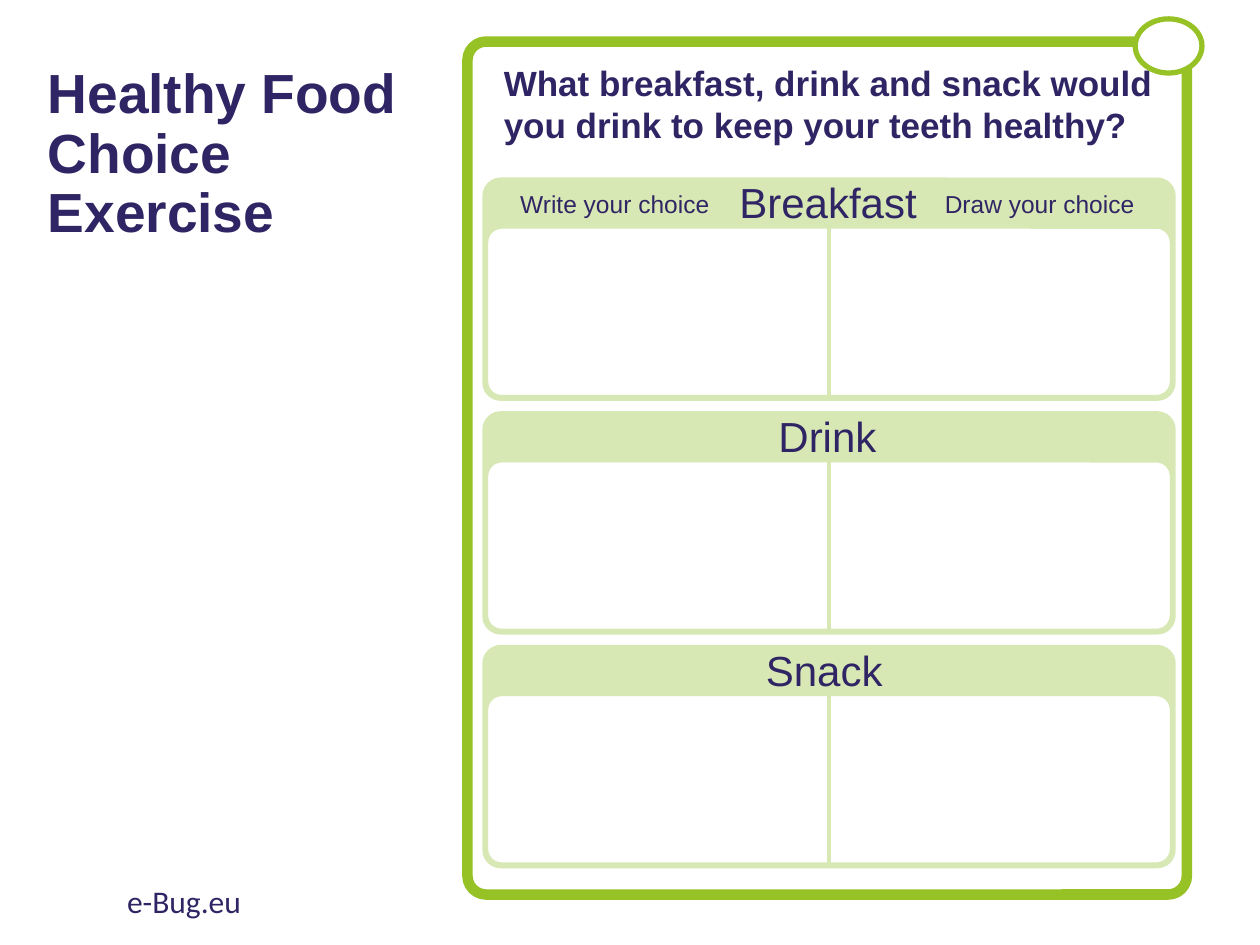
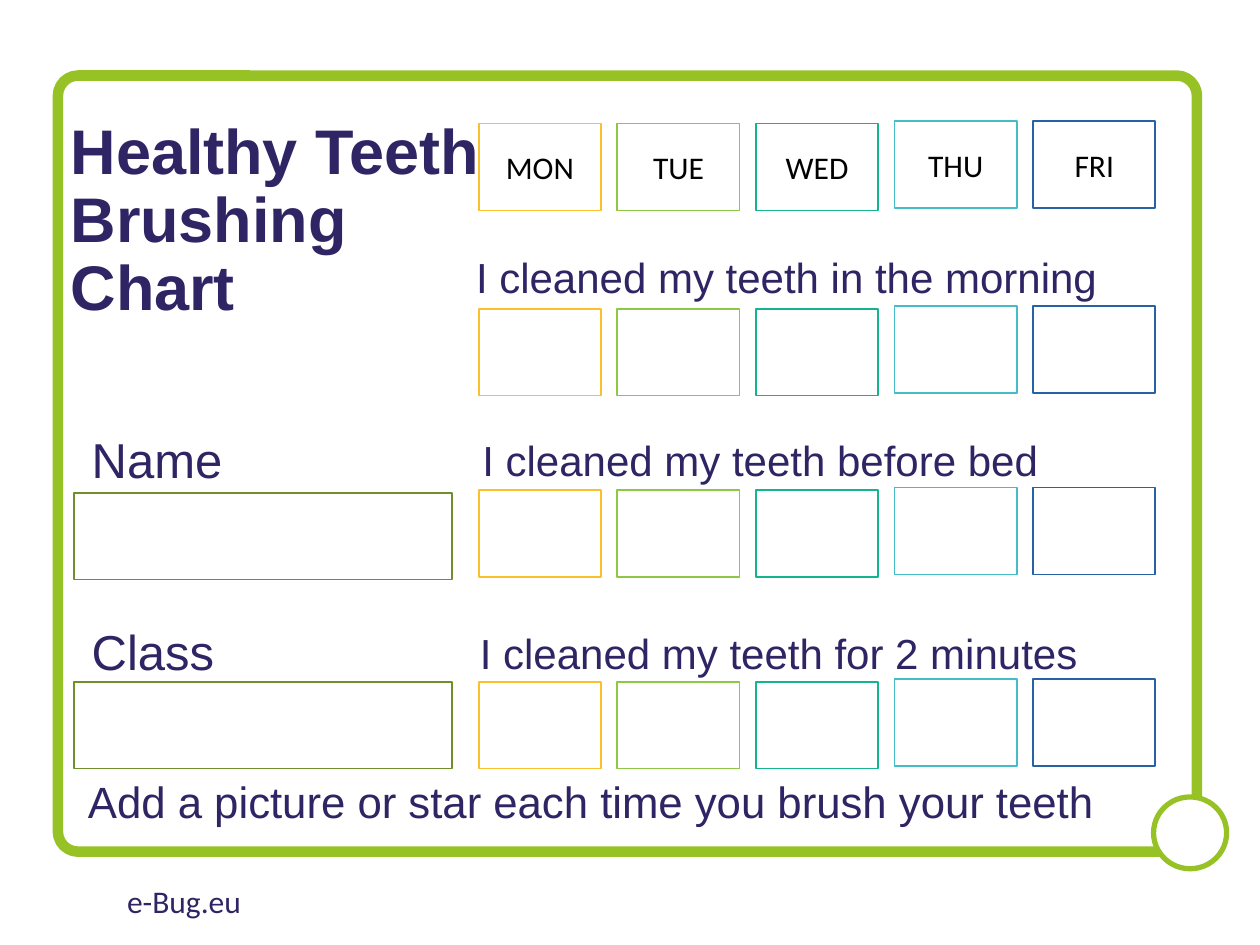
from dataclasses import dataclass

from lxml.etree import SubElement
from pptx import Presentation
from pptx.dml.color import RGBColor
from pptx.enum.shapes import MSO_CONNECTOR, MSO_SHAPE as Preset
from pptx.enum.text import MSO_ANCHOR as Anchor, MSO_AUTO_SIZE as AutoSize, PP_ALIGN as Align
from pptx.oxml.ns import qn
from pptx.util import Inches, Pt


@dataclass(frozen=True)
class Theme:
    ink: str = "302564"
    day_ink: str = "000000"
    paper: str = "FFFFFF"
    frame: str = "96C225"
    band: str = "D7E8B5"
    entry: str = "708F2B"
    heading_font: str = "Arial"
    plain_font: str = "Calibri"
    question: float = 20
    label: float = 24
    hint: float = 14
    field: float = 28
    reward: float = 25
    plain: float = 18


THEME = Theme()
SLIDE_W, SLIDE_H = Inches(10), Inches(7.5)
COLS, ROWS = 100, 75

# Meal panels: heading, heading column, heading width
MEALS = [("Breakfast", 57.7, 16.3), ("Drink", 60.8, 12.4), ("Snack", 59.8, 14.3)]
MEAL_LEFT, MEAL_TOP, MEAL_STEP = 38.6, 14.4, 18.55
MEAL_W, MEAL_H, BAND_H = 54.4, 17.1, 3.6

# Brushing chart: day, colour, upward shift of its column
DAYS = [("MON", "FBC02B", 0), ("TUE", "8EC742", 0), ("WED", "13B48E", 0),
        ("THU", "46BCC9", 0.2), ("FRI", "2862A4", 0.2)]
DAY_LEFT, DAY_STEP, DAY_W, BOX_H = 38, 11, 9.7, 6.9
DAY_ROW = 9.8
# Habit, its label column, label row and width, row of its boxes
HABITS = [("I cleaned my teeth in the morning", 36.8, 19.5, 53, 24.5),
          ("I cleaned my teeth before bed", 37.3, 34, 47.9, 38.9),
          ("I cleaned my teeth for 2 minutes", 37.1, 49.3, 53.9, 54.1)]
# Field, its label row, row of its box
FIELDS = [("Name", 33.6, 39.1), ("Class", 48.8, 54.1)]


def col(n):
    return int(SLIDE_W * n / COLS)


def row(n):
    return int(SLIDE_H * n / ROWS)


def area(left, top, width, height):
    return col(left), row(top), col(width), row(height)


def write(paragraph, text, size, color=THEME.ink, font=THEME.heading_font, bold=False):
    run = paragraph.add_run()
    run.text = text
    run.font.name, run.font.size, run.font.bold = font, Pt(size), bold
    run.font.color.rgb = RGBColor.from_string(color)


def add_label(slide, place, text, size, **style):
    frame = slide.shapes.add_textbox(*area(*place)).text_frame
    frame.word_wrap = True
    write(frame.paragraphs[0], text, size, **style)


def add_panel(slide, preset, place, line, weight, fill=None, corner=None):
    panel = slide.shapes.add_shape(preset, *area(*place))
    panel.shadow.inherit = False
    if fill:
        panel.fill.solid()
        panel.fill.fore_color.rgb = RGBColor.from_string(fill)
    else:
        panel.fill.background()
    panel.line.color.rgb = RGBColor.from_string(line)
    panel.line.width = Pt(weight)
    if corner is not None:
        panel.adjustments[0] = corner
    return panel


def add_frame(slide, border, badge):
    """Green border with a round badge on one corner."""
    add_panel(slide, Preset.ROUNDED_RECTANGLE, border, THEME.frame, 6, corner=0.026)
    add_panel(slide, Preset.OVAL, badge, THEME.frame, 3, fill=THEME.paper)


def add_divider(slide, panel, top):
    middle = panel.left + panel.width // 2
    divider = slide.shapes.add_connector(
        MSO_CONNECTOR.STRAIGHT, middle, row(top), middle, panel.top + panel.height)
    divider.end_connect(panel, 2)
    divider.line.color.rgb = RGBColor.from_string(THEME.band)
    divider.line.width = Pt(2.25)
    SubElement(divider._element.spPr, qn("a:effectLst"))


def add_titled_slide(deck, text, place, size):
    slide = deck.slides.add_slide(deck.slide_layouts[5])
    title = slide.shapes.title
    title.left, title.top, title.width, title.height = area(*place)
    frame = title.text_frame
    frame.word_wrap, frame.auto_size = True, AutoSize.NONE
    frame.vertical_anchor = Anchor.MIDDLE
    paragraph = frame.paragraphs[0]
    paragraph.alignment, paragraph.line_spacing = Align.LEFT, 0.9
    write(paragraph, text, size, bold=True)
    return slide


def add_footer(slide):
    add_label(slide, (9.1, 69.5, 33.8, 4), "e-Bug.eu", THEME.plain, font=THEME.plain_font)


def add_meal(slide, index, meal, heading_left, heading_w):
    top = MEAL_TOP + index * MEAL_STEP
    add_panel(slide, Preset.ROUNDED_RECTANGLE, (MEAL_LEFT, top, MEAL_W, MEAL_H),
              THEME.band, 4.5, fill=THEME.band, corner=0.067)
    answer = add_panel(slide, Preset.ROUNDED_RECTANGLE,
                       (MEAL_LEFT, top + BAND_H, MEAL_W, MEAL_H - BAND_H),
                       THEME.band, 2.25, fill=THEME.paper, corner=0.09)
    add_divider(slide, answer, top + 2.1)
    add_label(slide, (heading_left, top - 0.85, heading_w, 5), meal, THEME.label)


def add_day_boxes(slide, top, named=False):
    for index, (day, color, lift) in enumerate(DAYS):
        box = add_panel(slide, Preset.RECTANGLE,
                        (DAY_LEFT + index * DAY_STEP, top - lift, DAY_W, BOX_H), color, 1)
        if named:
            box.text_frame.vertical_anchor = Anchor.MIDDLE
            paragraph = box.text_frame.paragraphs[0]
            paragraph.alignment = Align.CENTER
            write(paragraph, day, THEME.plain, THEME.day_ink, THEME.plain_font)


def build_food_choice(deck):
    slide = add_titled_slide(deck, "Healthy Food Choice Exercise", (2.8, 5.8, 32.1, 13.1), 31.5)
    add_label(slide, (39, 4.4, 56, 7.7),
              "What breakfast, drink and snack would you drink to keep your teeth healthy?",
              THEME.question, bold=True)
    for index, meal in enumerate(MEALS):
        add_meal(slide, index, *meal)
    add_label(slide, (74, 14.5, 17.7, 3.4), "Draw your choice", THEME.hint)
    add_label(slide, (40.3, 14.5, 17.2, 3.4), "Write your choice", THEME.hint)
    add_frame(slide, (37.1, 3.3, 57.1, 67.7), (90.1, 1.5, 5.3, 4.3))
    add_footer(slide)


def build_brushing_chart(deck):
    slide = add_titled_slide(deck, "Healthy Teeth Brushing Chart", (4.6, 10.4, 35.7, 14.5), 36)
    # Days and habits
    add_day_boxes(slide, DAY_ROW, named=True)
    for habit, left, top, width, boxes_top in HABITS:
        add_label(slide, (left, top, width, 5), habit, THEME.label)
        add_day_boxes(slide, boxes_top)
    # Fields for the pupil
    for field, label_top, box_top in FIELDS:
        add_label(slide, (6.3, label_top, 14.3, 5.7), field, THEME.field)
        add_panel(slide, Preset.RECTANGLE, (5.9, box_top, 30, BOX_H), THEME.entry, 1)
    add_label(slide, (6, 61, 94, 5.2),
              "Add a picture or star each time you brush your teeth", THEME.reward)
    add_frame(slide, (4.6, 6, 90.4, 61.6), (91.55, 63.25, 5.8, 5.7))
    add_footer(slide)


def main():
    deck = Presentation()
    deck.slide_width, deck.slide_height = SLIDE_W, SLIDE_H
    build_food_choice(deck)
    build_brushing_chart(deck)
    deck.save("out.pptx")


if __name__ == "__main__":
    main()
